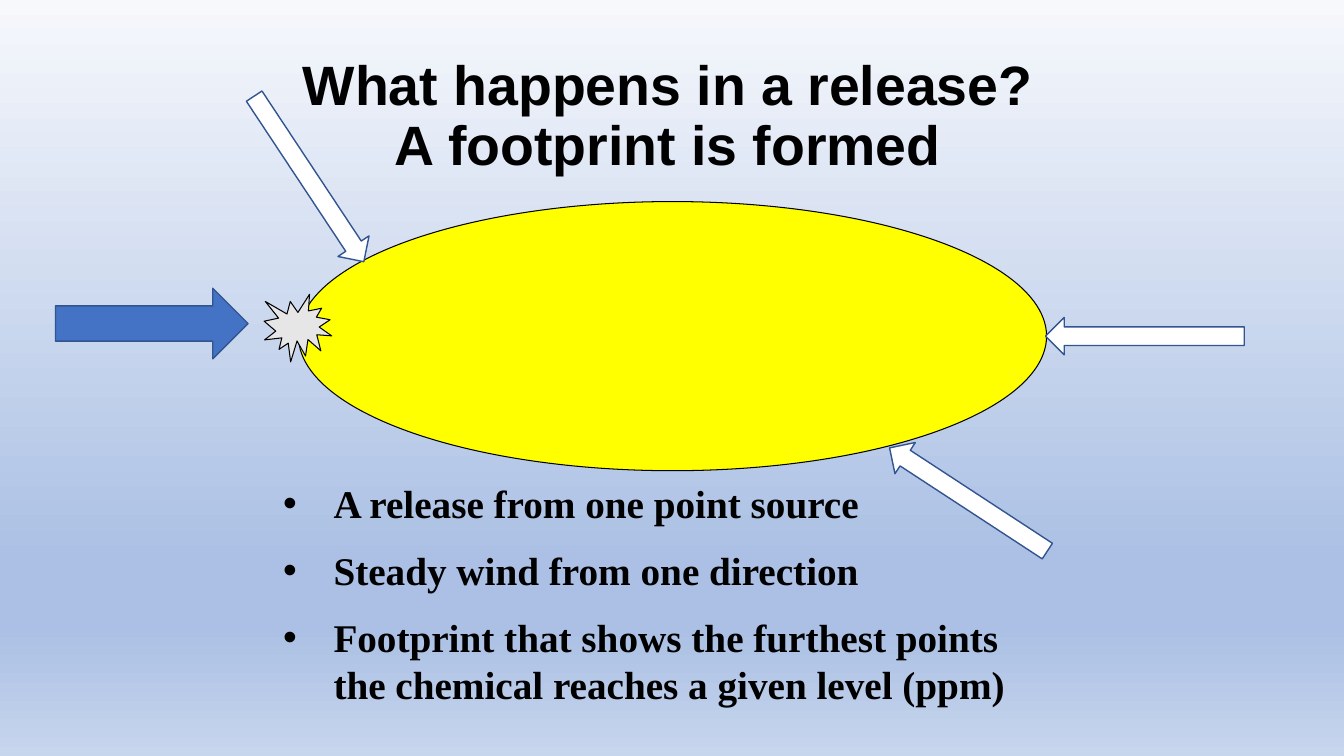
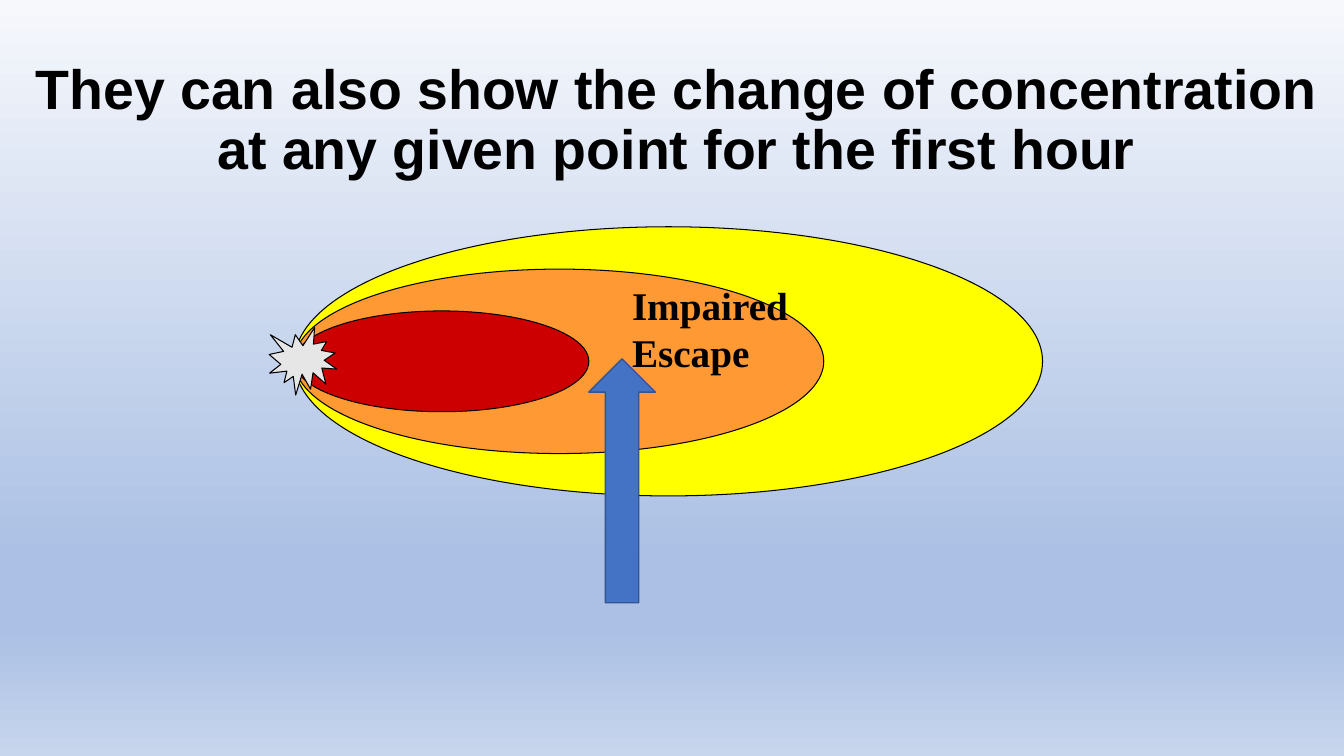
from lxml import etree
from pptx import Presentation
from pptx import util as u
from pptx.dml.color import RGBColor
from pptx.enum import shapes, text
from pptx.oxml.ns import qn

Inches, Pt = u.Inches, u.Pt
Preset = shapes.MSO_SHAPE

COLORS = {
    "ink": "000000",
    "low": "FFFF00",
    "medium": "FF9933",
    "high": "CC0000",
    "source": "E7E6E6",
    "wind": "4472C4",
    "pointer": "FFFFFF",
    "arrow_edge": "325491",
}
SKY = [(0, "F6F8FC"), (74, "ABC0E4"), (83, "ABC0E4"), (100, "C7D5ED")]
CLOUD_SIZE = (7.42, 2.67)
SOURCE_SIZE = 0.67


def rgb(name):
    return RGBColor.from_string(COLORS[name])


def paint_sky(master):
    master.background.fill.gradient()
    gradient = master.element.find(".//" + qn("a:gradFill"))
    stops = gradient.find(qn("a:gsLst"))
    for stop in list(stops):
        stops.remove(stop)
    for percent, color in SKY:
        stop = etree.SubElement(stops, qn("a:gs"), pos=str(percent * 1000))
        etree.SubElement(stop, qn("a:srgbClr"), val=color)
    gradient.find(qn("a:lin")).set("ang", "5400000")


def add_figure(slide, preset, box, fill, edge="ink", weight=0.75, rotation=0):
    figure = slide.shapes.add_shape(preset, *map(Inches, box))
    figure.shadow.inherit = False
    figure.fill.solid()
    figure.fill.fore_color.rgb = rgb(fill)
    figure.line.color.rgb = rgb(edge)
    figure.line.width = Pt(weight)
    figure.rotation = rotation


def add_arrow(slide, preset, box, fill="pointer", rotation=0):
    add_figure(slide, preset, box, fill, "arrow_edge", 1, rotation)


def add_bullet(paragraph, indent):
    properties = paragraph._p.get_or_add_pPr()
    properties.set("marL", str(Inches(indent)))
    properties.set("indent", str(Inches(-indent)))
    etree.SubElement(properties, qn("a:buFont"), typeface="Arial")
    etree.SubElement(properties, qn("a:buChar"), char="•")


def add_text(slide, box, lines, font="Times New Roman", size=28, align=text.PP_ALIGN.LEFT,
             anchor=text.MSO_ANCHOR.TOP, spacing=None, gap=0, indent=0):
    frame = slide.shapes.add_textbox(*map(Inches, box)).text_frame
    frame.word_wrap = True
    frame.vertical_anchor = anchor
    for index, line in enumerate(lines):
        paragraph = frame.add_paragraph() if index else frame.paragraphs[0]
        paragraph.text = line
        paragraph.alignment = align
        if spacing:
            paragraph.line_spacing = spacing
        if index and gap:
            paragraph.space_before = Pt(gap)
        if indent:
            add_bullet(paragraph, indent)
        for run in paragraph.runs:
            run.font.name = font
            run.font.size = Pt(size)
            run.font.bold = True
            run.font.color.rgb = rgb("ink")


def add_title(slide, box, title):
    add_text(slide, box, [title], font="Arial", size=39.6, align=text.PP_ALIGN.CENTER,
             anchor=text.MSO_ANCHOR.MIDDLE, spacing=0.9)


def add_footprint(slide, left, top, zones, source_offset):
    for width, height, fill in zones:
        zone_top = top + (CLOUD_SIZE[1] - height) / 2
        add_figure(slide, Preset.OVAL, (left, zone_top, width, height), fill)
    across, down = source_offset
    add_figure(slide, Preset.EXPLOSION1,
               (left + across, top + down, SOURCE_SIZE, SOURCE_SIZE), "source")


def build_release(slide):
    add_footprint(slide, 2.96, 2, [(*CLOUD_SIZE, "low")], (-0.34, 0.92))
    add_title(slide, (2.07, 0.54, 9.11, 1.25), "What happens in a release?\nA footprint is formed")
    add_text(slide, (2.71, 4.71, 7.83, 2.46), [
        "A release from one point source",
        "Steady wind from one direction",
        "Footprint that shows the furthest points the chemical reaches a given level (ppm)",
    ], gap=14, indent=0.5)
    add_arrow(slide, Preset.RIGHT_ARROW, (0.55, 2.86, 1.91, 0.7), "wind")
    edge_pointers = [
        ((2.88, 0.79, 0.37, 1.97), 326.5),
        ((9.42, 4.02, 0.37, 1.87), 123.2),
        ((11.17, 2.35, 0.37, 1.97), 90),
    ]
    for box, rotation in edge_pointers:
        add_arrow(slide, Preset.DOWN_ARROW, box, rotation=rotation)


def build_concentration(slide):
    zones = [(*CLOUD_SIZE, "low"), (5.25, 1.83, "medium"), (2.92, 1, "high")]
    add_footprint(slide, 2.92, 2.25, zones, (-0.25, 1))
    add_text(slide, (6.17, 2.74, 2.02, 1.04), ["Impaired Escape"])
    add_title(slide, (0.19, 0.58, 13.04, 1.25),
              "They can also show the change of concentration at any given point for the first hour")
    add_arrow(slide, Preset.UP_ARROW, (5.84, 3.56, 0.66, 2.42), "wind")


def main():
    deck = Presentation()
    deck.slide_width = Inches(13.33)
    deck.slide_height = Inches(7.5)
    paint_sky(deck.slide_master)
    for build in (build_release, build_concentration):
        build(deck.slides.add_slide(deck.slide_layouts[6]))
    deck.save("out.pptx")


if __name__ == "__main__":
    main()
